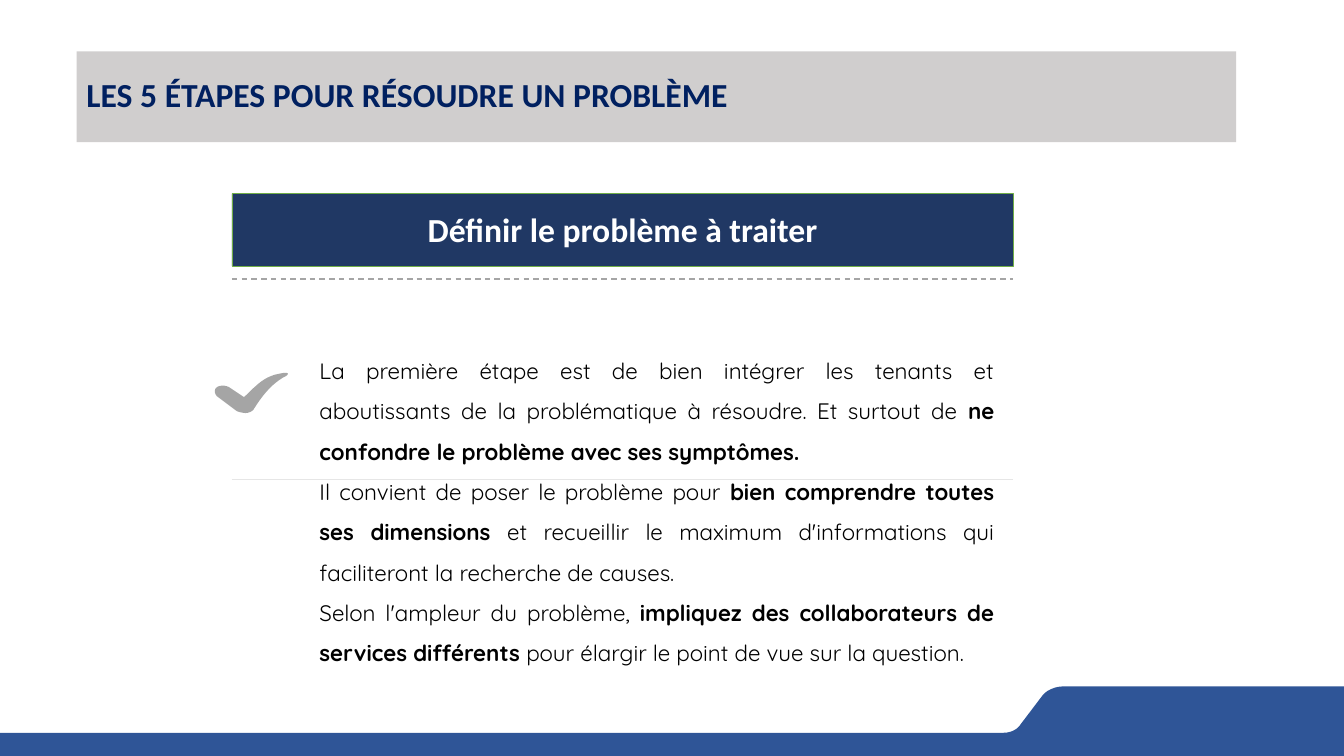
"""Build the slide on the first step of solving a problem."""
from lxml import etree
from pptx import Presentation
from pptx.dml.color import RGBColor
from pptx.enum.dml import MSO_LINE
from pptx.enum.shapes import MSO_CONNECTOR, MSO_SHAPE
from pptx.enum.text import MSO_ANCHOR, PP_ALIGN
from pptx.oxml.ns import qn
from pptx.util import Inches, Pt

TITLE = "LES 5 ÉTAPES POUR RÉSOUDRE UN PROBLÈME"
STEP = "Définir le problème à traiter"
BODY = [
    [("La première étape est de bien intégrer les tenants et aboutissants de la problématique à résoudre. Et surtout de ", False),
     ("ne confondre le problème avec ses symptômes. ", True)],
    [("Il convient de poser le problème pour ", False),
     ("bien comprendre toutes ses dimensions ", True),
     ("et recueillir le maximum d'informations qui faciliteront la recherche de causes.", False)],
    [("Selon l'ampleur du problème, ", False),
     ("impliquez des collaborateurs de services différents ", True),
     ("pour élargir le point de vue sur la question.", False)],
]
WAVE = [
    (10.55, 6.81), (10.46, 6.81, 10.38, 6.85, 10.34, 6.9), (10.12, 7.19),
    (10.09, 7.24, 10.02, 7.27, 9.95, 7.27), (0, 7.27), (0, 7.5),
    (13.33, 7.5), (13.33, 6.81),
]
CHECK = [
    (2.42, 3.94), (2.27, 3.84), (2.18, 3.8, 2.09, 3.85, 2.15, 3.93),
    (2.35, 4.08), (2.41, 4.1, 2.46, 4.11, 2.51, 4.07),
    (2.58, 3.96, 2.66, 3.84, 2.8, 3.75), (2.87, 3.72, 2.89, 3.68, 2.76, 3.71),
    (2.6, 3.74, 2.51, 3.86, 2.42, 3.94),
]
LEFT, TOP, WIDE, HIGH = 2.3, 1.92, 7.75, 2.84
UNITS = 1000

BLUE = RGBColor(0x2F, 0x55, 0x97)
NAVY = RGBColor(0x20, 0x38, 0x64)
INK = RGBColor(0x00, 0x20, 0x60)
SILVER = RGBColor(0xD0, 0xCE, 0xCE)
GREY = RGBColor(0xA5, 0xA5, 0xA5)
PALE = RGBColor(0xE6, 0xE6, 0xE6)
GREEN = RGBColor(0x70, 0xAD, 0x47)
WHITE = RGBColor(0xFF, 0xFF, 0xFF)
BLACK = RGBColor(0, 0, 0)
RECT, LINE = MSO_SHAPE.RECTANGLE, MSO_CONNECTOR.STRAIGHT
MIDDLE, DASH = MSO_ANCHOR.MIDDLE, MSO_LINE.DASH
START, CENTER, JUSTIFY = PP_ALIGN.LEFT, PP_ALIGN.CENTER, PP_ALIGN.JUSTIFY

deck = Presentation()
deck.slide_width, deck.slide_height = Inches(13.33), Inches(7.5)
slide = deck.slides.add_slide(deck.slide_layouts[6])
shapes = slide.shapes


def paint(shape, fill, edge=None):
    shape.shadow.inherit = False
    shape.fill.solid()
    shape.fill.fore_color.rgb = fill
    if edge is None:
        shape.line.fill.background()
    else:
        shape.line.color.rgb = edge
        shape.line.width = Pt(0.5)
    return shape


def trace(path, fill, steps=12):
    dots = [path[0]]
    for part in path[1:]:
        if len(part) == 2:
            dots.append(part)
            continue
        ends = [dots[-1], part[:2], part[2:4], part[4:]]
        for i in range(1, steps + 1):
            t = i / steps
            mix = ((1 - t) ** 3, 3 * t * (1 - t) ** 2, 3 * t * t * (1 - t), t ** 3)
            dots.append(tuple(sum(m * e[k] for m, e in zip(mix, ends)) for k in (0, 1)))
    grid = [(round(x * UNITS), round(y * UNITS)) for x, y in dots]
    pen = shapes.build_freeform(*grid[0], scale=Inches(1) / UNITS)
    pen.add_line_segments(grid[1:], close=True)
    paint(pen.convert_to_shape(), fill)


def block(box, fill, edge=None):
    return paint(shapes.add_shape(RECT, *map(Inches, box)), fill, edge)


def rule(y, color, width):
    line = shapes.add_connector(LINE, Inches(LEFT), Inches(y), Inches(LEFT + WIDE), Inches(y))
    line.line.color.rgb = color
    line.line.width = Pt(width)
    etree.SubElement(line._element.spPr, qn("a:effectLst"))
    return line


def write(shape, paras, font, size, color, align, gap):
    frame = shape.text_frame
    frame.word_wrap = True
    frame.vertical_anchor = MIDDLE
    for i, parts in enumerate(paras):
        para = frame.add_paragraph() if i else frame.paragraphs[0]
        para.alignment, para.line_spacing = align, gap
        for text, bold in parts:
            run = para.add_run()
            run.text = text
            run.font.name, run.font.size, run.font.bold = font, Pt(size), bold
            run.font.color.rgb = color


def label(box, *style):
    write(shapes.add_textbox(*map(Inches, box)), *style)


trace(WAVE, BLUE)
banner = block((0.76, 0.51, 11.5, 0.9), SILVER)
write(banner, [[(TITLE, True)]], "Calibri", 24, INK, START, 0.9)
block((LEFT, TOP, WIDE, HIGH), WHITE)
rule(TOP + HIGH, PALE, 0.5)
block((LEFT, TOP, WIDE, 0.72), NAVY, GREEN)
rule(2.77, GREY, 1).line.dash_style = DASH
trace(CHECK, GREY)
label((3.07, 3.14, 6.89, 3.74), BODY, "Quicksand", 16, BLACK, JUSTIFY, 1.5)
label((3.31, 2.02, 5.73, 0.5), [[(STEP, True)]], "Calibri", 24, WHITE, CENTER, 1.0)
deck.save("out.pptx")
